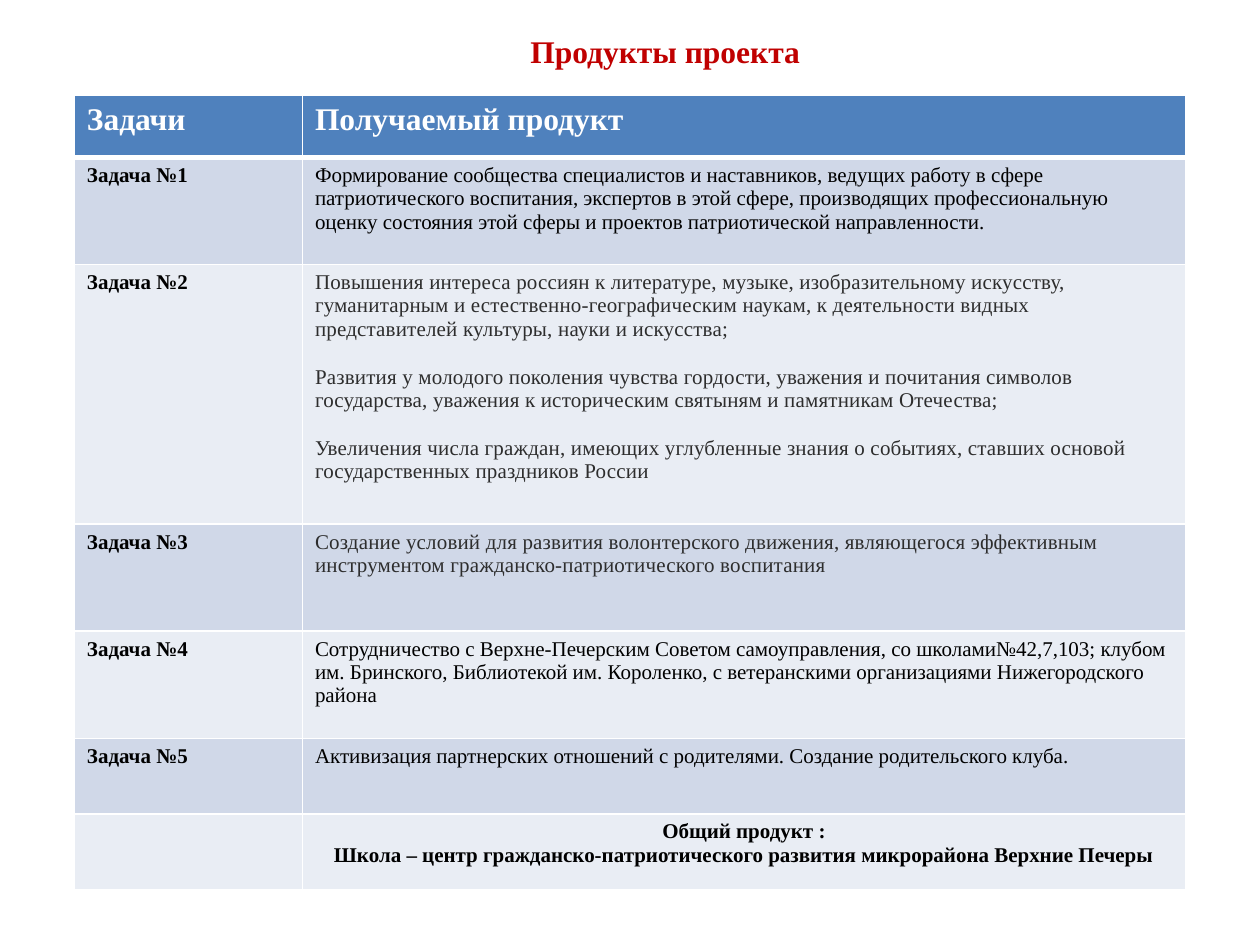
from lxml.etree import SubElement
from pptx import Presentation
from pptx.dml.color import RGBColor
from pptx.enum.text import MSO_ANCHOR, PP_ALIGN
from pptx.oxml.ns import qn
from pptx.util import Inches, Pt

FONT = "Times New Roman"
RED = RGBColor(0xC0, 0x00, 0x00)
BLUE = RGBColor(0x4F, 0x81, 0xBD)
BAND_DARK = RGBColor(0xD0, 0xD8, 0xE8)
BAND_LIGHT = RGBColor(0xE9, 0xED, 0xF4)
WHITE = RGBColor(0xFF, 0xFF, 0xFF)
BLACK = RGBColor(0x00, 0x00, 0x00)
GRAPHITE = RGBColor(0x2D, 0x2D, 0x2D)

COLUMN_WIDTHS = [1.81, 7.01]
ROW_HEIGHTS = [0.49, 0.85, 2.06, 0.85, 0.85, 0.6, 0.6]
HEADINGS = ["Задачи", "Получаемый продукт"]
TASKS = [
    (["Формирование сообщества специалистов и наставников, ведущих работу в сфере "
      "патриотического воспитания, экспертов в этой сфере, производящих профессиональную "
      "оценку состояния этой сферы и проектов патриотической направленности."], BLACK, 0),
    (["Повышения интереса россиян к литературе, музыке, изобразительному искусству, "
      "гуманитарным и естественно-географическим наукам, к деятельности видных "
      "представителей культуры, науки и искусства;",
      "Развития у молодого поколения чувства гордости, уважения и почитания символов "
      "государства, уважения к историческим святыням и памятникам Отечества;",
      "Увеличения числа граждан, имеющих углубленные знания о событиях, ставших основой "
      "государственных праздников России"], GRAPHITE, 0.1),
    (["Создание условий для развития волонтерского движения, являющегося эффективным "
      "инструментом гражданско-патриотического воспитания"], GRAPHITE, 0.1),
    (["Сотрудничество с Верхне-Печерским Советом самоуправления, со школами№42,7,103; клубом "
      "им. Бринского, Библиотекой им. Короленко, с ветеранскими организациями Нижегородского "
      "района"], BLACK, 0),
    (["Активизация партнерских отношений с родителями. Создание родительского клуба."], BLACK, 0),
]
SUMMARY = ["Общий продукт :",
           "Школа – центр гражданско-патриотического развития микрорайона Верхние Печеры"]


class SlideBuilder:
    def __init__(self, slide, font):
        self.slide = slide
        self.font = font

    def add_text(self, frame, paragraphs, size=12, color=BLACK, bold=False,
                 align=PP_ALIGN.LEFT, tracking=0, gap=0):
        for index, content in enumerate(paragraphs):
            paragraph = frame.add_paragraph() if index else frame.paragraphs[0]
            paragraph.alignment = align
            if index and gap:
                paragraph.space_before = Pt(gap)
            run = paragraph.add_run()
            run.text = content
            run.font.name = self.font
            run.font.size = Pt(size)
            run.font.bold = bold
            run.font.color.rgb = color
            if tracking:
                run._r.get_or_add_rPr().set("spc", str(round(tracking * 100)))

    def title(self, content, left, top, width, height):
        heading = self.slide.shapes.title
        heading.left, heading.top = Inches(left), Inches(top)
        heading.width, heading.height = Inches(width), Inches(height)
        heading.text_frame.word_wrap = True
        heading.text_frame.vertical_anchor = MSO_ANCHOR.TOP
        self.add_text(heading.text_frame, [content], 18, RED, True, PP_ALIGN.CENTER)

    def table(self, left, top, widths, heights):
        grid = self.slide.shapes.add_table(
            len(heights), len(widths), Inches(left), Inches(top),
            Inches(sum(widths)), Inches(sum(heights))).table
        for column, width in zip(grid.columns, widths):
            column.width = Inches(width)
        for row, height in zip(grid.rows, heights):
            row.height = Inches(height)
        return grid

    def paint(self, cell, fill, top=1, bottom=1):
        properties = cell._tc.get_or_add_tcPr()
        for tag, weight in (("a:lnL", 1), ("a:lnR", 1), ("a:lnT", top), ("a:lnB", bottom)):
            border = SubElement(properties, qn(tag), w=str(Pt(weight)))
            solid = SubElement(border, qn("a:solidFill"))
            SubElement(solid, qn("a:srgbClr"), val=str(WHITE))
        cell.fill.solid()
        cell.fill.fore_color.rgb = fill


def main():
    deck = Presentation()
    deck.slide_width, deck.slide_height = Inches(10), Inches(7.5)
    builder = SlideBuilder(deck.slides.add_slide(deck.slide_layouts[5]), FONT)

    builder.title("Продукты проекта", 2.01, 0.2, 6.54, 0.4)
    products = builder.table(0.59, 0.76, COLUMN_WIDTHS, ROW_HEIGHTS)

    for number, row in enumerate(products.rows):
        fill = BLUE if number == 0 else BAND_DARK if number % 2 else BAND_LIGHT
        for cell in row.cells:
            builder.paint(cell, fill, top=3 if number == 1 else 1,
                          bottom=1 if number else 3)

    for column, heading in enumerate(HEADINGS):
        builder.add_text(products.cell(0, column).text_frame, [heading], 18, WHITE, True)
    for number, (results, color, tracking) in enumerate(TASKS, 1):
        builder.add_text(products.cell(number, 0).text_frame, [f"Задача №{number}"], bold=True)
        builder.add_text(products.cell(number, 1).text_frame, results, color=color,
                         tracking=tracking, gap=14)
    builder.add_text(products.cell(len(TASKS) + 1, 1).text_frame, SUMMARY,
                     bold=True, align=PP_ALIGN.CENTER)

    deck.save("out.pptx")


if __name__ == "__main__":
    main()
